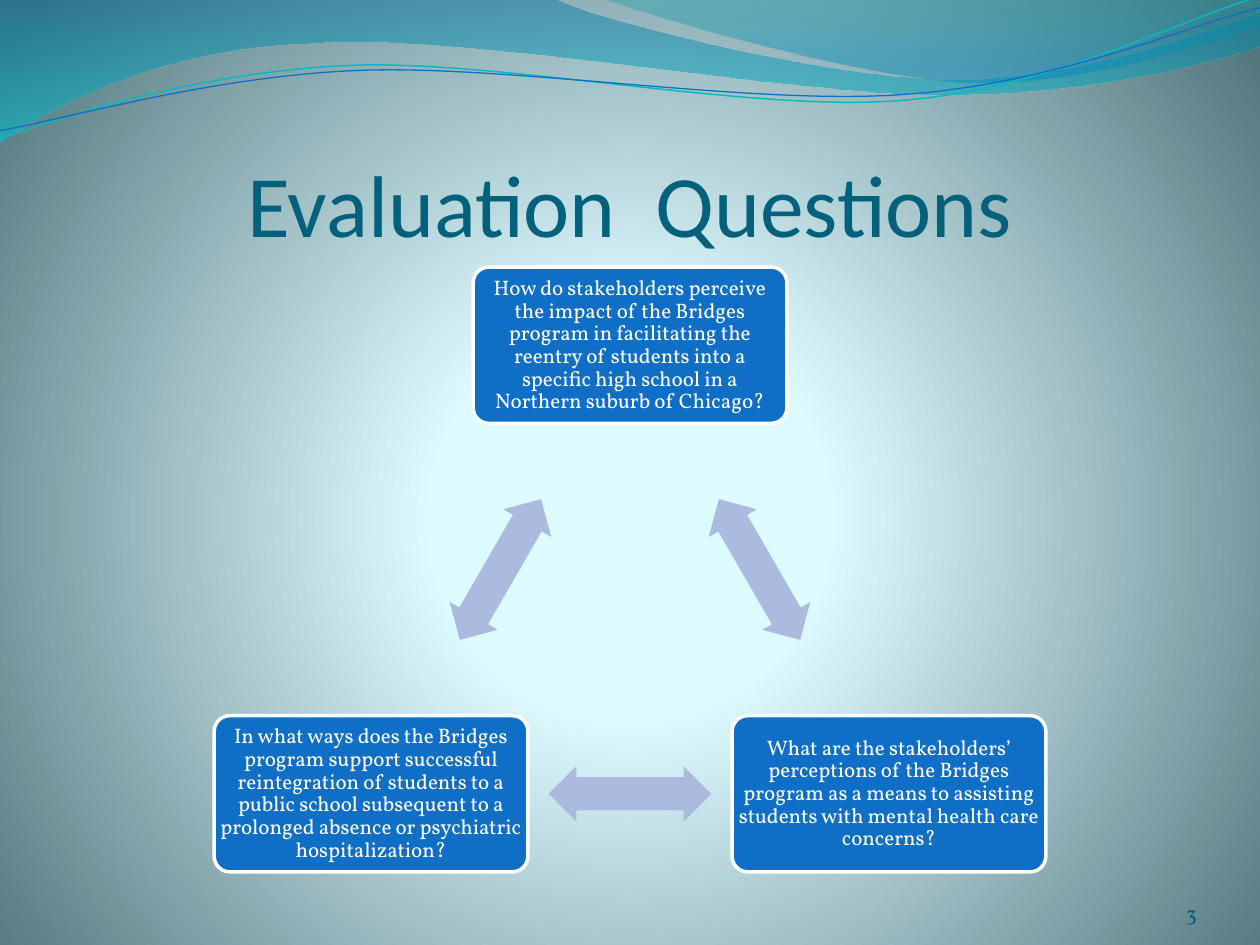
from math import cos, radians, sin

from lxml.etree import Element, SubElement
from pptx import Presentation
from pptx.dml.color import RGBColor
from pptx.enum.shapes import MSO_SHAPE
from pptx.enum.text import MSO_ANCHOR, PP_ALIGN
from pptx.oxml.ns import qn
from pptx.util import Pt

PX = 9144  # EMU in one px, 100 px to the inch
WIDTH, HEIGHT = 1000, 750
BODY_FONT = "Vollkorn"

QUESTIONS = [
    "How do stakeholders perceive the impact of the Bridges program in facilitating "
    "the reentry of students into a specific high school in a Northern suburb of Chicago?",
    "What are the stakeholders’ perceptions of the Bridges program as a means to "
    "assisting students with mental health care concerns?",
    "In what ways does the Bridges program support successful reintegration of students "
    "to a public school subsequent to a prolonged absence or psychiatric hospitalization?",
]

# Wave outlines: a pair is a straight segment, six numbers are a Bézier curve
LEFT_WAVE = [(0, 0), (440, -1), (476, 17, 664, 63, 758, 63),
             (853, 63, 958, 26, 1000, 9), (1001, 36),
             (983, 44, 870, 76, 746, 75), (622, 75, 382, 28, 257, 34),
             (129, 36, 46, 83, -1, 113), (0, 0)]
RIGHT_WAVE = [(479, -1), (509, 11, 682, 62, 769, 65),
              (856, 69, 961, 32, 1000, 21), (1000, 0), (479, -1)]
TEAL_LINE = [(-2, 111), (48, 93, 158, 57, 277, 52),
             (395, 47, 593, 89, 713, 80), (833, 71, 938, 15, 998, -2)]
BLUE_LINE = [(-2, 104), (47, 96, 164, 61, 283, 56),
             (403, 51, 597, 84, 717, 75), (836, 67, 941, 21, 1000, 6)]


def px(n):
    return round(n * PX)


def color(hex_code):
    return RGBColor.from_string(hex_code)


def set_gradient(fill, parent, stops, center=None):
    """Stops are (position, colour, opacity); runs downwards unless center is given."""
    fill.gradient()
    grad = parent.find(".//" + qn("a:gradFill"))
    for child in list(grad):
        grad.remove(child)
    stop_list = SubElement(grad, qn("a:gsLst"))
    for position, hex_code, opacity in stops:
        stop = SubElement(stop_list, qn("a:gs"), pos=str(position * 1000))
        clr = SubElement(stop, qn("a:srgbClr"), val=hex_code)
        if opacity < 100:
            SubElement(clr, qn("a:alpha"), val=str(opacity * 1000))
    if center:
        circle = SubElement(grad, qn("a:path"), path="circle")
        SubElement(circle, qn("a:fillToRect"),
                   {side: str(v * 1000) for side, v in zip("ltrb", center)})
    else:
        SubElement(grad, qn("a:lin"), ang="5400000", scaled="1")


def write(sp, text, size=12, font=BODY_FONT, fill="FFFFFF", align=PP_ALIGN.CENTER,
          anchor=MSO_ANCHOR.MIDDLE, insets=(0, 0, 0, 0), spacing=None):
    tf = sp.text_frame
    tf.word_wrap = True
    tf.vertical_anchor = anchor
    tf.margin_left, tf.margin_top, tf.margin_right, tf.margin_bottom = map(px, insets)
    p = tf.paragraphs[0]
    p.alignment = align
    p.line_spacing = spacing
    r = p.add_run()
    r.text = text
    r.font.size = Pt(size)
    r.font.name = font
    r.font.color.rgb = color(fill)


def add_label(s, box, text, **fmt):
    write(s.shapes.add_textbox(*map(px, box)), text, **fmt)


def bend(sp, box, outline):
    """Swap straight segments of the freeform for the outline's curves."""
    left, top = px(box[0]) - sp.left, px(box[1]) - sp.top
    path = sp.element.spPr.find(".//" + qn("a:path"))
    for segment, part in zip(path.findall(qn("a:lnTo")), outline[1:]):
        if len(part) == 6:
            curve = Element(qn("a:cubicBezTo"))
            for x, y in zip(part[::2], part[1::2]):
                SubElement(curve, qn("a:pt"), x=str(left + px(x)), y=str(top + px(y)))
            path.replace(segment, curve)


def add_wave(s, box, outline, stops=None, line=None, weight=1):
    left, top = box[:2]
    points = [(px(left + part[-2]), px(top + part[-1])) for part in outline]
    builder = s.shapes.build_freeform(*points[0], scale=1.0)
    builder.add_line_segments(points[1:], close=bool(stops))
    sp = builder.convert_to_shape()
    bend(sp, box, outline)
    sp.shadow.inherit = False
    if stops:
        set_gradient(sp.fill, sp.element.spPr, stops)
        sp.line.fill.background()
    else:
        sp.fill.background()
        sp.line.color.rgb = color(line)
        sp.line.width = Pt(weight)


def add_header(s, box):
    add_wave(s, box, LEFT_WAVE, stops=[(0, "0074A1", 45), (100, "00C6CF", 55)])
    add_wave(s, box, RIGHT_WAVE, stops=[(0, "00A1A9", 30), (80, "008BBF", 45)])
    add_wave(s, box, TEAL_LINE, line="0AB8BF", weight=0.85)
    add_wave(s, box, BLUE_LINE, line="0F6FC6", weight=0.75)


def add_centered(s, kind, center, size, fill, adjustments):
    (x, y), (w, h) = center, size
    sp = s.shapes.add_shape(kind, px(x - w / 2), px(y - h / 2), px(w), px(h))
    for i, value in enumerate(adjustments):
        sp.adjustments[i] = value
    sp.shadow.inherit = False
    sp.fill.solid()
    sp.fill.fore_color.rgb = color(fill)
    return sp


def add_cycle(s, box, questions):
    """Questions around a circle, with a two-way arrow halfway between neighbours."""
    left, top, width, height = box
    node_w, node_h = 249, 124
    count = len(questions)
    step = 360 / count
    # The lowest nodes sit half a step away from straight down
    radius = (height - node_h) / (1 + cos(radians(step / 2)))
    cx, cy = left + width / 2, top + node_h / 2 + radius
    centers = [(cx + radius * sin(radians(i * step)), cy - radius * cos(radians(i * step)))
               for i in range(count)]
    for i, (question, (x, y)) in enumerate(zip(questions, centers)):
        node = add_centered(s, MSO_SHAPE.ROUNDED_RECTANGLE, (x, y), (node_w, node_h),
                            "0F6FC6", [0.1])
        node.line.color.rgb = color("FFFFFF")
        node.line.width = Pt(2)
        # The rounded corners already inset the text by almost 4 px
        write(node, question, insets=(1, 1, 1, 1), spacing=0.9)

        next_x, next_y = centers[(i + 1) % count]
        arrow = add_centered(s, MSO_SHAPE.LEFT_RIGHT_ARROW,
                             ((x + next_x) / 2, (y + next_y) / 2), (129, 44),
                             "ABBBDF", [0.6, 0.5])
        arrow.line.fill.background()
        arrow.rotation = (i + 0.5) * step


def main():
    prs = Presentation()
    prs.slide_width, prs.slide_height = px(WIDTH), px(HEIGHT)
    s = prs.slides.add_slide(prs.slide_layouts[6])

    # Background and waves
    set_gradient(s.background.fill, s.element,
                 [(0, "DEFBFF", 100), (25, "DDFAFF", 100), (100, "52767C", 100)],
                 center=(10, 110, 10, 100))
    add_header(s, (0, 0, WIDTH, 114))

    # Title
    add_label(s, (50, 77, 900, 125), "Evaluation  Questions", size=50, font="Calibri",
              fill="04617B", anchor=MSO_ANCHOR.BOTTOM, insets=(0, 5, 0, 0))

    # Question cycle
    add_cycle(s, (170, 212, 660, 480), QUESTIONS)

    # Slide number
    add_label(s, (867, 695, 83, 40), "3", fill="045D75", align=PP_ALIGN.RIGHT,
              anchor=MSO_ANCHOR.BOTTOM)

    prs.save("out.pptx")


if __name__ == "__main__":
    main()
